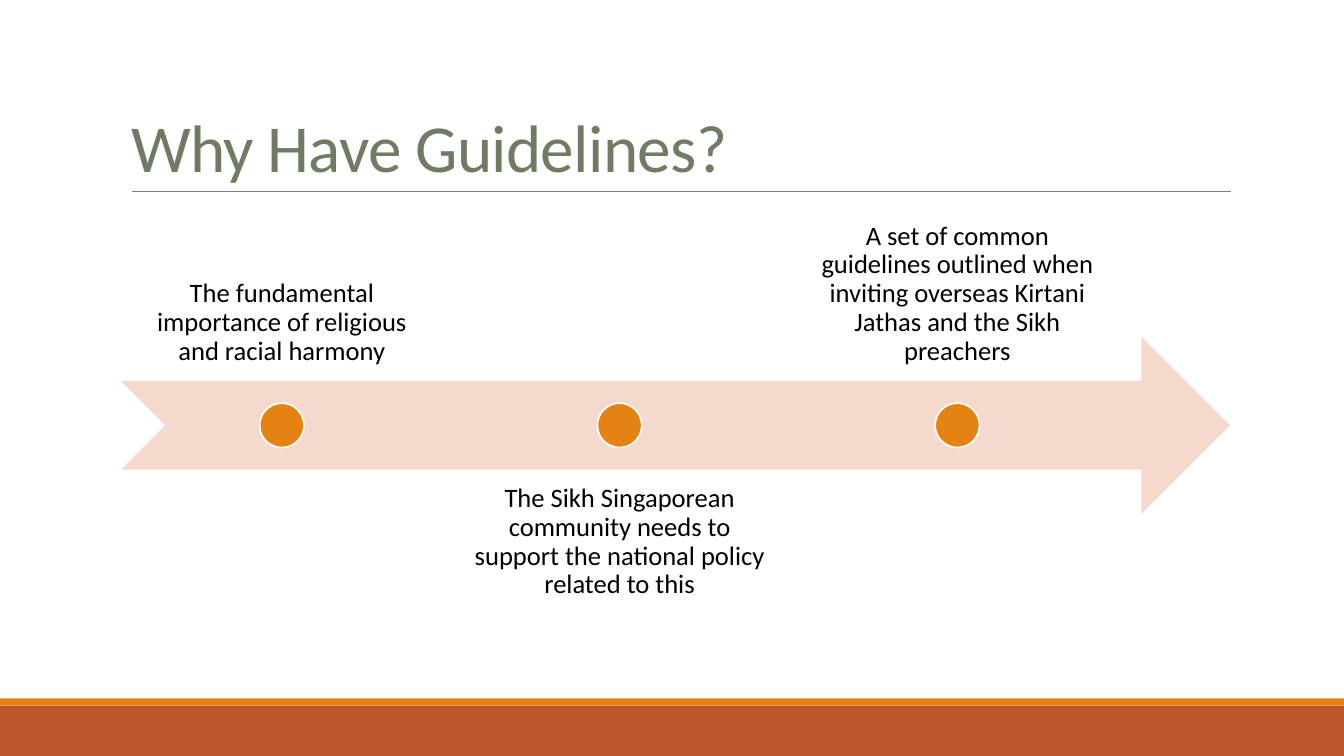
"""Build the slide on why guidelines are needed, as a three-step arrow."""
from lxml.etree import SubElement
from pptx import Presentation
from pptx.dml.color import RGBColor
from pptx.enum.shapes import MSO_CONNECTOR, MSO_SHAPE
from pptx.enum.text import MSO_ANCHOR, PP_ALIGN
from pptx.oxml.ns import qn
from pptx.util import Inches, Pt

TITLE = "Why Have Guidelines?"
REASONS = [
    "The fundamental importance of religious and racial harmony",
    "The Sikh Singaporean community needs to support the national policy related to this",
    "A set of common guidelines outlined when inviting overseas Kirtani Jathas and the Sikh preachers",
]
BANDS = [(7, 0.5, "BD582C"), (6.93, 0.07, "E48312")]
ORANGE, PEACH, GREEN, GRAY, BLACK, WHITE = "E48312", "F5D9CC", "6F7B63", "808080", "000000", "FFFFFF"

SLIDE_WIDTH, SLIDE_HEIGHT = 13.33, 7.5
ARROW_LEFT, ARROW_TOP, ARROW_WIDTH, ARROW_HEIGHT = 1.2, 3.34, 11, 1.76
LABEL_WIDTH, LABEL_STEP, LABEL_INSET = 3.19, 3.35, 0.15
UPPER_TOP, LOWER_TOP = 2.02, 4.66
DOT_SIZE = 0.44


def color(value):
    return RGBColor.from_string(value)


def add_figure(slide, preset, left, top, width, height, fill, line=None):
    figure = slide.shapes.add_shape(preset, Inches(left), Inches(top), Inches(width), Inches(height))
    figure.shadow.inherit = False
    figure.fill.solid()
    figure.fill.fore_color.rgb = color(fill)
    if line:
        figure.line.color.rgb = color(line)
        figure.line.width = Pt(1.25)
    else:
        figure.line.fill.background()
    return figure


def write_text(box, text, size, ink, align, anchor, line_spacing, inset=None, tracking=None):
    frame = box.text_frame
    frame.word_wrap = True
    frame.vertical_anchor = anchor
    if inset is not None:
        frame.margin_left = frame.margin_right = Inches(inset)
        frame.margin_top = frame.margin_bottom = Inches(inset)
    para = frame.paragraphs[0]
    para.alignment = align
    para.line_spacing = line_spacing
    span = para.add_run()
    span.text = text
    span.font.name = "Calibri"
    span.font.size = Pt(size)
    span.font.color.rgb = color(ink)
    if tracking is not None:
        span.font._element.set("spc", str(round(tracking * 100)))


def add_title(slide):
    for top, height, fill in BANDS:
        add_figure(slide, MSO_SHAPE.RECTANGLE, 0, top, SLIDE_WIDTH, height, fill)
    rule = slide.shapes.add_connector(
        MSO_CONNECTOR.STRAIGHT, Inches(1.31), Inches(1.9), Inches(12.21), Inches(1.9))
    rule.line.color.rgb = color(GRAY)
    rule.line.width = Pt(0.5)
    SubElement(rule._element.spPr, qn("a:effectLst"))
    title = slide.shapes.title
    title.left, title.top = Inches(1.2), Inches(0.31)
    title.width, title.height = Inches(11), Inches(1.59)
    write_text(title, TITLE, size=48, ink=GREEN, align=PP_ALIGN.LEFT,
               anchor=MSO_ANCHOR.BOTTOM, line_spacing=0.85, tracking=-0.5)


def add_timeline(slide):
    add_figure(slide, MSO_SHAPE.NOTCHED_RIGHT_ARROW,
               ARROW_LEFT, ARROW_TOP, ARROW_WIDTH, ARROW_HEIGHT, PEACH)
    dot_top = ARROW_TOP + (ARROW_HEIGHT - DOT_SIZE) / 2
    for index, reason in enumerate(REASONS):
        left = ARROW_LEFT + index * LABEL_STEP
        above = index % 2 == 0
        label = slide.shapes.add_textbox(
            Inches(left), Inches(UPPER_TOP if above else LOWER_TOP),
            Inches(LABEL_WIDTH), Inches(ARROW_HEIGHT))
        write_text(label, reason, size=19, ink=BLACK, align=PP_ALIGN.CENTER,
                   anchor=MSO_ANCHOR.BOTTOM if above else MSO_ANCHOR.TOP,
                   line_spacing=0.9, inset=LABEL_INSET)
        dot_left = left + (LABEL_WIDTH - DOT_SIZE) / 2
        add_figure(slide, MSO_SHAPE.OVAL, dot_left, dot_top, DOT_SIZE, DOT_SIZE, ORANGE, line=WHITE)


def main():
    deck = Presentation()
    deck.slide_width, deck.slide_height = Inches(SLIDE_WIDTH), Inches(SLIDE_HEIGHT)
    slide = deck.slides.add_slide(deck.slide_layouts[5])
    add_title(slide)
    add_timeline(slide)
    deck.save("out.pptx")


if __name__ == "__main__":
    main()
